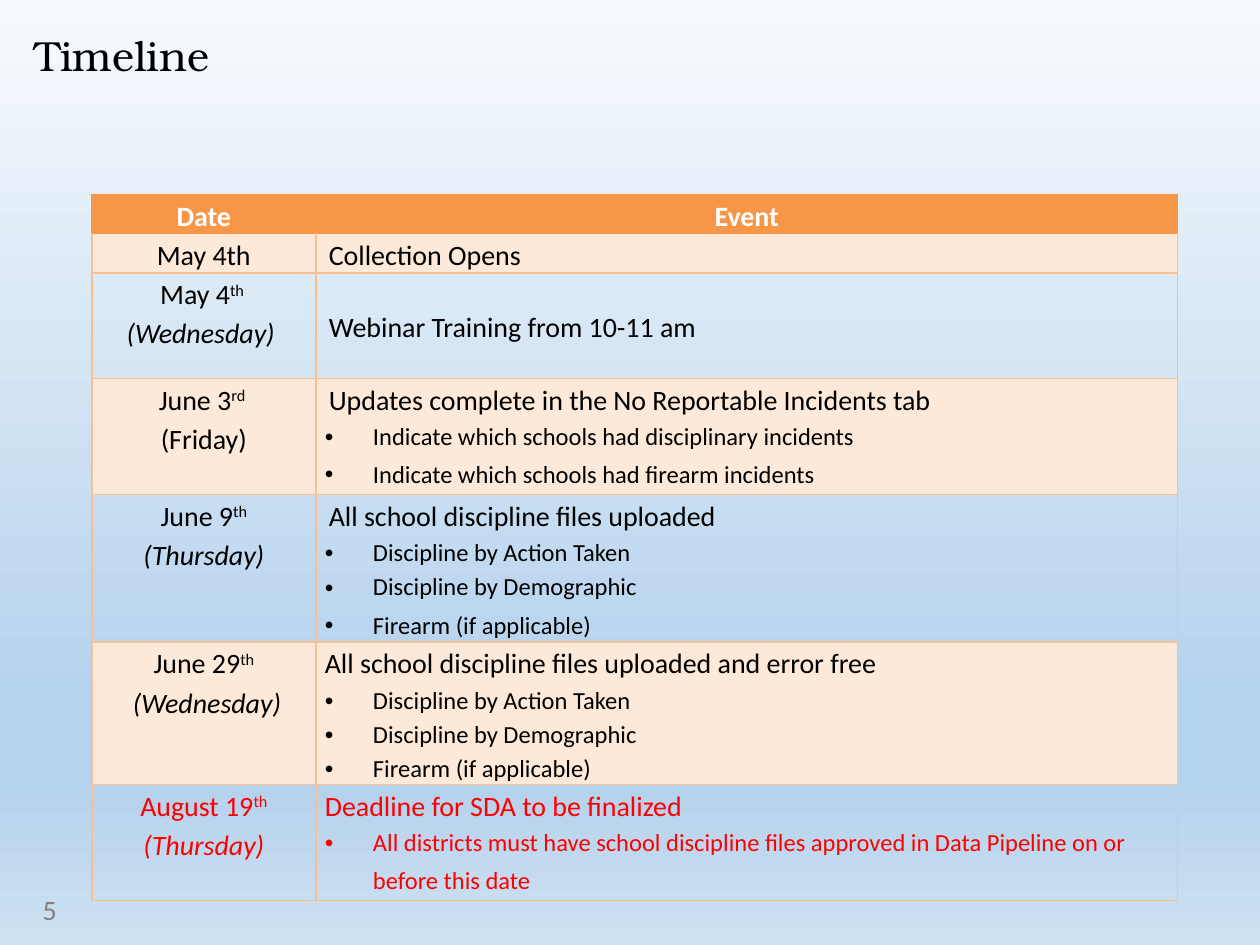
import pptx
import pptx.dml.color
import pptx.enum.text
import pptx.oxml
import pptx.oxml.ns
import pptx.util

Cm, Pt = pptx.util.Cm, pptx.util.Pt
ALIGN = pptx.enum.text.PP_ALIGN
ANCHOR = pptx.enum.text.MSO_ANCHOR
NS = pptx.oxml.ns.nsdecls("a")

COLORS = {
    "black": "000000", "white": "FFFFFF", "red": "FF0000", "gray": "808080",
    "head": "F79646", "band": "FDE9D9", "rule": "FABF8F",
}
SKY = [(0, "F7FAFD"), (74, "B5D2EC"), (83, "B5D2EC"), (100, "CEE1F2")]
COLS = [4.52, 17.37]

# Rows: height, date paragraphs, event paragraphs, color.
# A run is (text, style): "s" superscript, "i" italic, "" plain.
# An event is (kind, text, tail); a tail is a closing space in the large size.
FILES = ["Discipline by Action Taken", "Discipline by Demographic"]
BULLETS = [("bullet", name, "") for name in FILES]
ROWS = [
    (0.79, [[("May 4th", "")]], [("lead", "Collection Opens", "")], "black"),
    (2.13, [[("May 4", ""), ("th ", "s")], [("(Wednesday) ", "i")]],
     [("lead", "Webinar Training from 10-11 am ", " ")], "black"),
    (2.34, [[("June 3", ""), ("rd ", "s")], [("(Friday)", "")]],
     [("lead", "Updates complete in the No Reportable Incidents tab", ""),
      ("bullet", "Indicate which schools had disciplinary incidents", ""),
      ("bullet", "Indicate which schools had firearm incidents", " ")],
     "black"),
    (2.97, [[("June 9", ""), ("th ", "s"), ("(Thursday)", "i")]],
     [("lead", "All school discipline files uploaded", ""), *BULLETS,
      ("bullet", "Firearm (if applicable)", " ")], "black"),
    (2.87, [[("June 29", ""), ("th", "s")], [(" ", ""), ("(Wednesday)", "i")]],
     [("flush", "All school discipline files uploaded and error free", ""),
      *BULLETS, ("bullet", "Firearm (if applicable)", "")], "black"),
    (2.34, [[("August 19", ""), ("th ", "s"), ("(Thursday)", "i")]],
     [("flush", "Deadline for SDA to be finalized", ""),
      ("bullet", "All districts must have school discipline files approved "
       "in Data Pipeline on or before this date", " ")], "red"),
]


def rgb(name):
    return pptx.dml.color.RGBColor.from_string(COLORS[name])


def add_run(para, text, size, color, style="", face="Calibri", bold=False):
    run = para.add_run()
    run.text = text
    font = run.font
    font.name, font.size, font.bold = face, Pt(size), bold
    font.italic = style == "i"
    font.color.rgb = rgb(color)
    if style == "s":
        font._element.set("baseline", "30000")


def next_para(frame, index):
    """Return the paragraph at index, adding it after the first."""
    para = frame.add_paragraph() if index else frame.paragraphs[0]
    para.line_spacing = 1.15
    return para


def indent(para, left, first=0):
    props = para._p.get_or_add_pPr()
    props.set("marL", str(Cm(left)))
    props.set("indent", str(Cm(first)))


def add_bullet(para):
    indent(para, 0.97, -0.97)
    props = para._p.get_or_add_pPr()
    for tag in ('buFont {} typeface="Arial"', 'buChar {} char="•"'):
        props.append(pptx.oxml.parse_xml(f"<a:{tag.format(NS)}/>"))


def style_cell(cell, fill, edges):
    """Set margins, fill and edges; edges maps a side (L, R, T, B) to a color."""
    cell.margin_left = cell.margin_right = Cm(0.18)
    cell.margin_top = cell.margin_bottom = 0
    props = cell._tc.get_or_add_tcPr()
    for side in "LRTB":
        color = edges.get(side)
        paint = (f'<a:solidFill><a:srgbClr val="{COLORS[color]}"/></a:solidFill>'
                 if color else "<a:noFill/>")
        props.append(pptx.oxml.parse_xml(
            f'<a:ln{side} {NS} w="{Pt(1)}">{paint}</a:ln{side}>'))
    if fill:
        cell.fill.solid()
        cell.fill.fore_color.rgb = rgb(fill)
    else:
        cell.fill.background()


def fill_head(table):
    for col, (text, side) in enumerate([("Date", "L"), ("Event", "R")]):
        cell = table.cell(0, col)
        style_cell(cell, "head", dict.fromkeys(side + "TB", "head"))
        para = next_para(cell.text_frame, 0)
        para.alignment = ALIGN.CENTER
        add_run(para, text, 16, "white", bold=True)


def fill_date(cell, lines, color):
    for i, runs in enumerate(lines):
        para = next_para(cell.text_frame, i)
        para.alignment = ALIGN.CENTER
        for text, style in runs:
            add_run(para, text, 16, color, style)


def fill_event(cell, items, color):
    for i, (kind, text, tail) in enumerate(items):
        para = next_para(cell.text_frame, i)
        if kind == "bullet":
            add_bullet(para)
        elif kind == "lead":
            indent(para, 0.08)
        add_run(para, text, 14 if kind == "bullet" else 16, color)
        if tail:
            add_run(para, tail, 16, "black")


def add_dates(slide):
    heights = [0.79] + [row[0] for row in ROWS]
    table = slide.shapes.add_table(
        len(heights), len(COLS), Cm(1.85), Cm(3.92),
        Cm(sum(COLS)), Cm(sum(heights))).table
    table.first_row = table.horz_banding = False
    for col, width in zip(table.columns, COLS):
        col.width = Cm(width)
    for row, height in zip(table.rows, heights):
        row.height = Cm(height)
    fill_head(table)
    for r, (_, date, event, color) in enumerate(ROWS, 1):
        edges = dict.fromkeys("LRTB", "rule")
        if r == 1:
            edges["T"] = "head"
        for col in range(len(COLS)):
            style_cell(table.cell(r, col), "band" if r % 2 else None, edges)
        fill_date(table.cell(r, 0), date, color)
        fill_event(table.cell(r, 1), event, color)
    table.cell(2, 1).vertical_anchor = ANCHOR.MIDDLE


def add_text(slide, box, text, size, color, face="Calibri", inset=True):
    frame = slide.shapes.add_textbox(*map(Cm, box)).text_frame
    frame.word_wrap = True
    if not inset:
        frame.margin_left = frame.margin_right = 0
        frame.margin_top = frame.margin_bottom = 0
    para = frame.paragraphs[0]
    add_run(para, text, size, color, face=face)
    return para


def paint_sky(slide):
    fill = slide.background.fill
    fill.gradient()
    fill.gradient_angle = 270
    stops = fill.gradient_stops._gsLst
    for stop in list(stops):
        stops.remove(stop)
    for pos, color in SKY:
        stops.append(pptx.oxml.parse_xml(
            f'<a:gs {NS} pos="{pos * 1000}"><a:srgbClr val="{color}"/></a:gs>'))


def main():
    deck = pptx.Presentation()
    deck.slide_width, deck.slide_height = Cm(25.4), Cm(19.05)
    slide = deck.slides.add_slide(deck.slide_layouts[6])
    paint_sky(slide)
    title = add_text(slide, (0.69, 0.71, 16.89, 2.11), "Timeline", 24,
                     "black", "TeX Gyre Bonum", inset=False)
    title.line_spacing = 0.9
    add_dates(slide)
    add_text(slide, (0.61, 17.86, 5.72, 1.02), "5", 16, "gray")
    deck.save("out.pptx")


if __name__ == "__main__":
    main()
